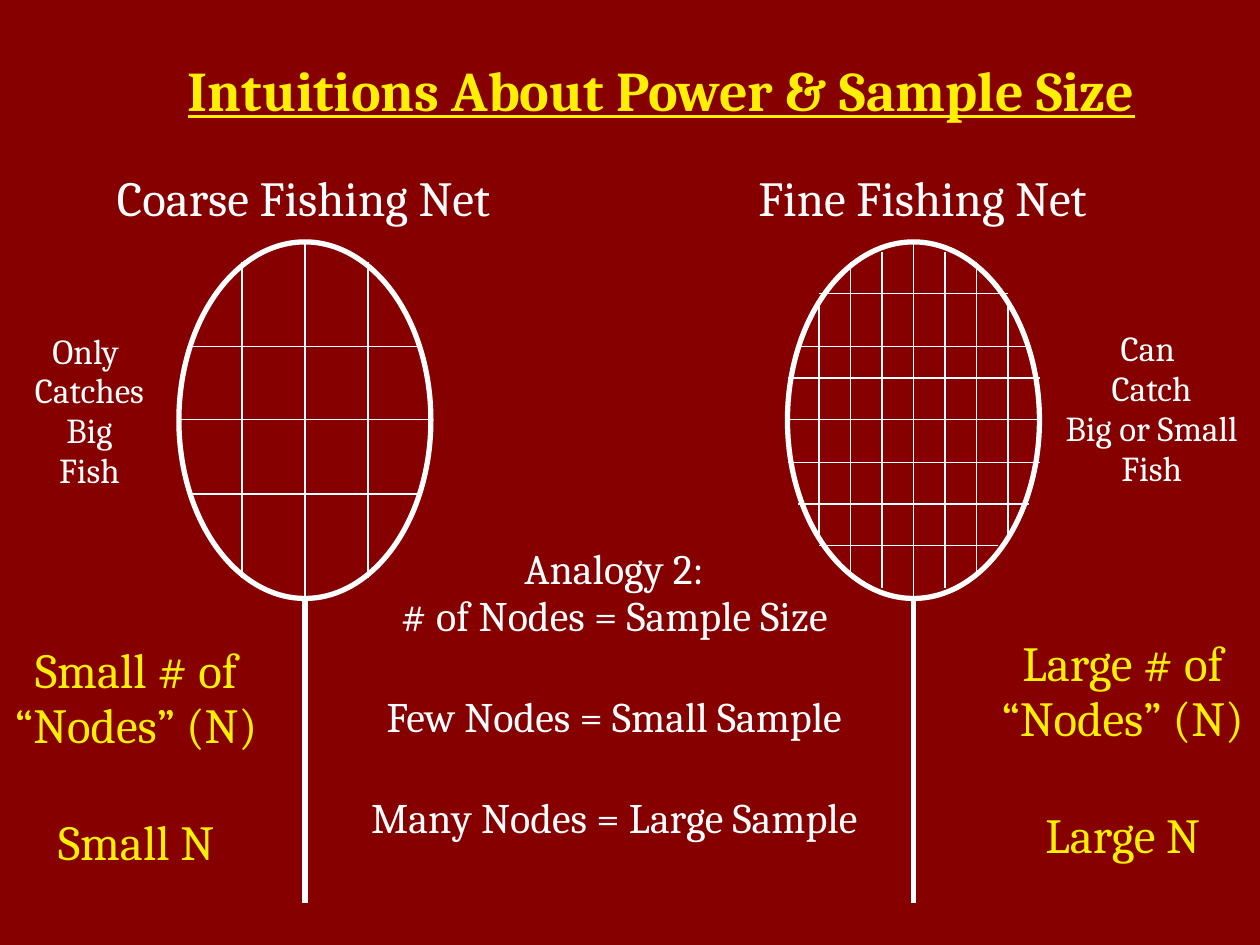
import pptx
import pptx.dml.color
import pptx.enum.shapes
import pptx.enum.text
import pptx.util
from pptx.util import Inches
from lxml import etree

FONT = "Cambria"
MAROON, YELLOW, WHITE = "860000", "FFEF02", "FFFFFF"
NET_W, NET_H, HANDLE = 2, 2.83, 2.42
COARSE_COLUMNS = [(0.5, 0.16), (1, 0), (1.5, 0.16)]
FINE_COLUMNS = COARSE_COLUMNS + [(0.25, 0.5), (0.75, 0.08), (1.25, 0.08), (1.75, 0.5)]
COARSE_ROWS = [(0.83, 0.08, 1.91), (1.41, 0, 2), (2, 0.08, 1.91)]
FINE_ROWS = [(0.41, 0.25, 1.75), (0.83, 0.08, 1.92), (1.08, 0, 2), (1.41, 0, 2),
             (1.75, 0, 2), (2.08, 0.08, 1.92), (2.41, 0.25, 1.67)]


def color(value):
    return pptx.dml.color.RGBColor.from_string(value)


def add_line(s, x1, y1, x2, y2, width):
    line = s.shapes.add_connector(pptx.enum.shapes.MSO_CONNECTOR.STRAIGHT,
                                  Inches(x1), Inches(y1), Inches(x2), Inches(y2))
    line.line.color.rgb = color(WHITE)
    line.line.width = pptx.util.Pt(width)
    etree.SubElement(line._element.spPr, pptx.oxml.ns.qn("a:effectLst"))


def add_run(p, text, size, fill):
    r = p.add_run()
    r.text = text
    r.font.name = FONT
    r.font.size = pptx.util.Pt(size)
    r.font.color.rgb = color(fill)
    return r


def add_title(s, x, y, w, h, text):
    tf = s.shapes.add_textbox(Inches(x), Inches(y), Inches(w), Inches(h)).text_frame
    tf.word_wrap = True
    tf.vertical_anchor = pptx.enum.text.MSO_ANCHOR.MIDDLE
    p = tf.paragraphs[0]
    p.alignment = pptx.enum.text.PP_ALIGN.CENTER
    r = add_run(p, text, 32, YELLOW)
    r.font.bold = True
    r.font.underline = True


def add_label(s, x, y, w, h, lines, size, fill=WHITE, gaps=(), centered=True):
    tf = s.shapes.add_textbox(Inches(x), Inches(y), Inches(w), Inches(h)).text_frame
    tf.word_wrap = False
    tf.auto_size = pptx.enum.text.MSO_AUTO_SIZE.SHAPE_TO_FIT_TEXT
    align = pptx.enum.text.PP_ALIGN
    for i, text in enumerate(lines):
        p = tf.add_paragraph() if i else tf.paragraphs[0]
        p.alignment = align.CENTER if centered else align.LEFT
        p.line_spacing = 0.9
        p.space_before = pptx.util.Pt(1.2 + (1.27 * size if i in gaps else 0))
        add_run(p, text, size, fill)


def add_net(s, x, y, columns, rows):
    rim = s.shapes.add_shape(pptx.enum.shapes.MSO_SHAPE.OVAL,
                             Inches(x), Inches(y), Inches(NET_W), Inches(NET_H))
    rim.shadow.inherit = False
    rim.fill.background()
    rim.line.color.rgb = color(WHITE)
    rim.line.width = pptx.util.Pt(3)
    middle, bottom = x + NET_W / 2, y + NET_H
    add_line(s, middle, bottom, middle, bottom + HANDLE, 3)
    for offset, inset in columns:
        add_line(s, x + offset, y + inset, x + offset, bottom - inset, 0.75)
    for offset, start, end in rows:
        add_line(s, x + start, y + offset, x + end, y + offset, 0.75)


def main():
    prs = pptx.Presentation()
    prs.slide_width, prs.slide_height = Inches(10), Inches(7.5)
    s = prs.slides.add_slide(prs.slide_layouts[6])
    s.background.fill.solid()
    s.background.fill.fore_color.rgb = color(MAROON)

    add_title(s, 1, 0.08, 8.5, 1.25, "Intuitions About Power & Sample Size")
    add_net(s, 1.42, 1.92, COARSE_COLUMNS, COARSE_ROWS)
    add_net(s, 6.25, 1.92, FINE_COLUMNS, FINE_ROWS)
    add_label(s, 0.83, 1.33, 3.2, 0.52, ["Coarse Fishing Net"], 28, centered=False)
    add_label(s, 5.92, 1.33, 2.81, 0.52, ["Fine Fishing Net"], 28, centered=False)
    for x, y, amount in [(-0.01, 5.08, "Small"), (7.82, 5.02, "Large")]:
        add_label(s, x, y, 2.18, 2.06, [f"{amount} # of", "“Nodes” (N)", f"{amount} N"],
                  28, YELLOW, gaps=(2,))
    add_label(s, 0.17, 2.6, 1.08, 1.5, ["Only ", "Catches", "Big", "Fish"], 20)
    add_label(s, 8.33, 2.58, 1.62, 1.5, ["Can ", "Catch", "Big or Small", "Fish"], 20)
    add_label(s, 2.81, 4.3, 4.13, 2.66,
              ["Analogy 2:", "# of Nodes = Sample Size", "Few Nodes = Small Sample",
               "Many Nodes = Large Sample"], 24, gaps=(2, 3))
    prs.save("out.pptx")


if __name__ == "__main__":
    main()
